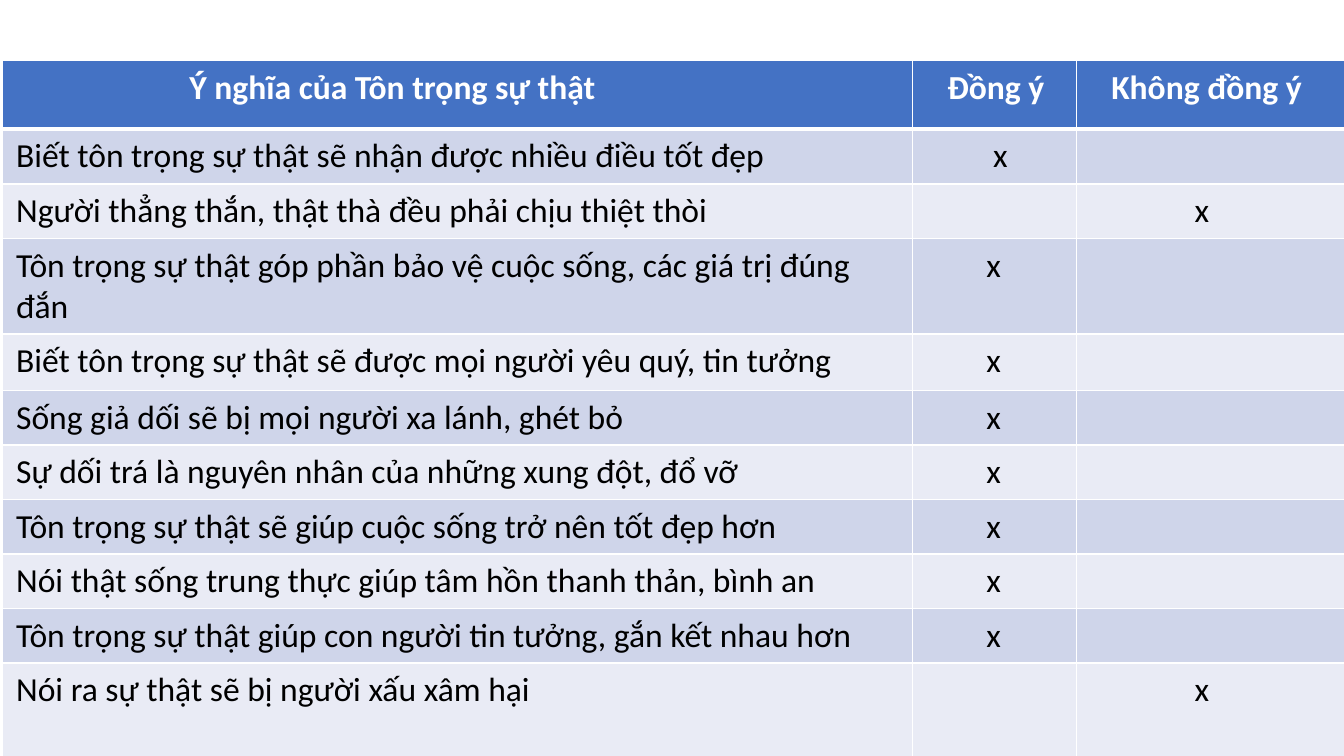
"""Build a slide with a table of statements about respecting the truth."""
import pptx
import pptx.dml.color
import pptx.oxml
import pptx.oxml.ns
import pptx.util

Inches = pptx.util.Inches
Pt = pptx.util.Pt
RGB = pptx.dml.color.RGBColor.from_string

COLORS = {"header": "4472C4", "odd": "CFD5EA", "even": "E9EBF5",
          "line": "FFFFFF", "heading": "FFFFFF", "body": "000000"}
COLUMN_WIDTHS = [6.77, 1.22, 2]
ROW_HEIGHTS = [0.51, 0.41, 0.37, 0.65, 0.42, 0.38, 0.34, 0.38, 0.34, 0.39, 0.72]
HEADINGS = ["Ý nghĩa của Tôn trọng sự thật", "Đồng ý", "Không đồng ý"]
HEADING_INSETS = [1.39, 0.26, 0.26]
BODY_INSETS = [0.1, 0.55, 0.88]
STATEMENTS = [
    ("Biết tôn trọng sự thật sẽ nhận được nhiều điều tốt đẹp", True),
    ("Người thẳng thắn, thật thà đều phải chịu thiệt thòi", False),
    ("Tôn trọng sự thật góp phần bảo vệ cuộc sống, các giá trị đúng đắn", True),
    ("Biết tôn trọng sự thật sẽ được mọi người yêu quý, tin tưởng", True),
    ("Sống giả dối sẽ bị mọi người xa lánh, ghét bỏ", True),
    ("Sự dối trá là nguyên nhân của những xung đột, đổ vỡ", True),
    ("Tôn trọng sự thật sẽ giúp cuộc sống trở nên tốt đẹp hơn", True),
    ("Nói thật sống trung thực giúp tâm hồn thanh thản, bình an", True),
    ("Tôn trọng sự thật giúp con người tin tưởng, gắn kết nhau hơn", True),
    ("Nói ra sự thật sẽ bị người xấu xâm hại", False),
]


def add_borders(cell, widths):
    """Draw the cell's borders, given as a width in points for each side."""
    properties = cell._tc.get_or_add_tcPr()
    for side, width in widths.items():
        properties.append(pptx.oxml.parse_xml(
            f'<a:ln{side} {pptx.oxml.ns.nsdecls("a")} w="{Pt(width)}"><a:solidFill>'
            f'<a:srgbClr val="{COLORS["line"]}"/></a:solidFill></a:ln{side}>'))


deck = pptx.Presentation()
deck.slide_width, deck.slide_height = Inches(10), Inches(10 * 9 / 16)
page = deck.slides.add_slide(deck.slide_layouts[6])

rows = [HEADINGS]
for statement, agree in STATEMENTS:
    rows.append([statement, "x" if agree else "", "" if agree else "x"])

frame = page.shapes.add_table(
    len(rows), len(HEADINGS), Inches(0.02), Inches(0.45),
    Inches(sum(COLUMN_WIDTHS)), Inches(sum(ROW_HEIGHTS)))
table = frame.table
for column, width in zip(table.columns, COLUMN_WIDTHS):
    column.width = Inches(width)
for row, height in zip(table.rows, ROW_HEIGHTS):
    row.height = Inches(height)

for row_index, texts in enumerate(rows):
    is_header = row_index == 0
    band = "header" if is_header else "odd" if row_index % 2 else "even"
    insets = HEADING_INSETS if is_header else BODY_INSETS
    for column_index, text in enumerate(texts):
        cell = table.cell(row_index, column_index)
        add_borders(cell, {"L": 1, "R": 1, "T": 3 if row_index == 1 else 1,
                           "B": 3 if is_header else 1})
        cell.fill.solid()
        cell.fill.fore_color.rgb = RGB(COLORS[band])
        cell.margin_left = Inches(insets[column_index])
        cell.text = text
        font = cell.text_frame.paragraphs[0].font
        font.name, font.size, font.bold = "Calibri", Pt(18), is_header
        font.color.rgb = RGB(COLORS["heading" if is_header else "body"])

table.cell(1, 1).margin_left = Inches(0.6)

deck.save("out.pptx")
